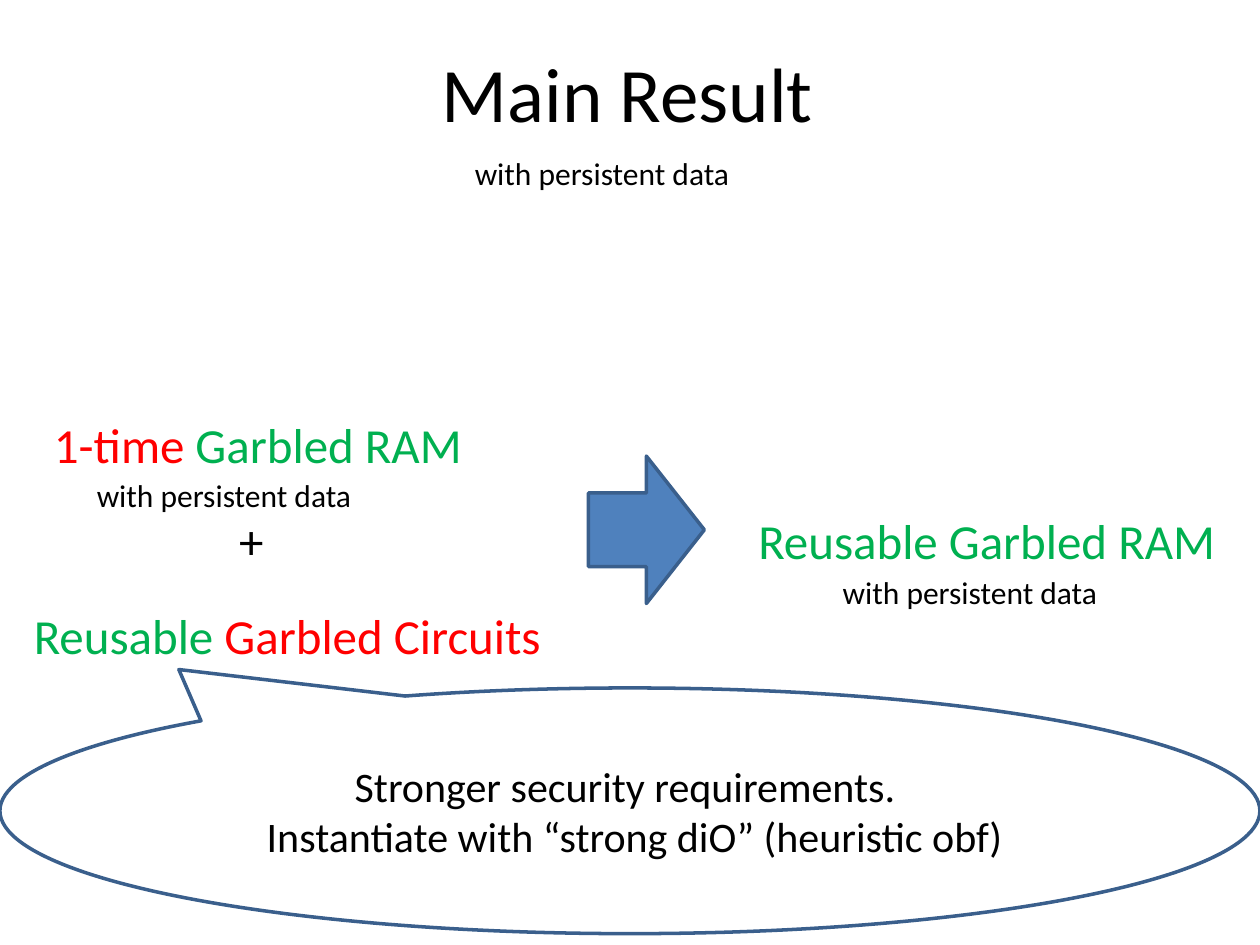
"""Builds the "Main Result" slide on reusable garbled RAM."""
from dataclasses import dataclass

from pptx import Presentation
from pptx.dml.color import RGBColor
from pptx.enum.shapes import MSO_SHAPE
from pptx.enum.text import MSO_ANCHOR, PP_ALIGN
from pptx.util import Inches, Pt


@dataclass(frozen=True)
class Theme:
    font: str = "Calibri"
    title: int = 44
    formula: int = 28
    callout: int = 24
    note: int = 18
    black: RGBColor = RGBColor(0x00, 0x00, 0x00)
    white: RGBColor = RGBColor(0xFF, 0xFF, 0xFF)
    red: RGBColor = RGBColor(0xFF, 0x00, 0x00)
    green: RGBColor = RGBColor(0x00, 0xB0, 0x50)
    blue: RGBColor = RGBColor(0x4F, 0x81, 0xBD)
    outline: RGBColor = RGBColor(0x3A, 0x5F, 0x8C)


theme = Theme()


def add_run(p, text, size=theme.formula, color=theme.black):
    r = p.add_run()
    r.text = text
    r.font.name = theme.font
    r.font.size = Pt(size)
    r.font.color.rgb = color


prs = Presentation()
prs.slide_width, prs.slide_height = Inches(10), Inches(7.5)
s = prs.slides.add_slide(prs.slide_layouts[6])

title = s.shapes.add_textbox(Inches(0.48), Inches(0.1), Inches(9), Inches(1.25))
tf = title.text_frame
tf.word_wrap = True
tf.vertical_anchor = MSO_ANCHOR.MIDDLE
tf.paragraphs[0].alignment = PP_ALIGN.CENTER
add_run(tf.paragraphs[0], "Main Result", size=theme.title)

formulas = [
    (0.33, 3.24, 3.48, [("1-time ", theme.red), ("Garbled RAM", theme.green)]),
    (5.92, 4, 3.87, [("Reusable Garbled RAM", theme.green)]),
    (1.8, 4, 0.4, [("+", theme.black)]),
    (0.17, 4.76, 4.27, [("Reusable ", theme.green), ("Garbled Circuits", theme.red)]),
]
for left, top, width, parts in formulas:
    sp = s.shapes.add_textbox(Inches(left), Inches(top), Inches(width), Inches(0.57))
    sp.text_frame.word_wrap = False
    for text, color in parts:
        add_run(sp.text_frame.paragraphs[0], text, color=color)

arrow = s.shapes.add_shape(
    MSO_SHAPE.RIGHT_ARROW, Inches(4.67), Inches(3.62), Inches(0.92), Inches(1.17))
callout = s.shapes.add_shape(
    MSO_SHAPE.OVAL_CALLOUT, Inches(0), Inches(5.46), Inches(10), Inches(1.95))
callout.adjustments[0] = -0.358
callout.adjustments[1] = -0.575
for sp, fill in ((arrow, theme.blue), (callout, theme.white)):
    sp.shadow.inherit = False
    sp.fill.solid()
    sp.fill.fore_color.rgb = fill
    sp.line.color.rgb = theme.outline
    sp.line.width = Pt(2)

tf = callout.text_frame
tf.word_wrap = True
tf.vertical_anchor = MSO_ANCHOR.MIDDLE
lines = ["Stronger security requirements. ",
         " Instantiate with “strong diO” (heuristic obf)"]
for i, text in enumerate(lines):
    p = tf.add_paragraph() if i else tf.paragraphs[0]
    p.alignment = PP_ALIGN.CENTER
    add_run(p, text, size=theme.callout)

for left, top in ((0.67, 3.73), (6.59, 4.5), (3.67, 1.17)):
    sp = s.shapes.add_textbox(Inches(left), Inches(top), Inches(2.24), Inches(0.4))
    sp.text_frame.word_wrap = False
    add_run(sp.text_frame.paragraphs[0], "with persistent data", size=theme.note)

prs.save("out.pptx")
